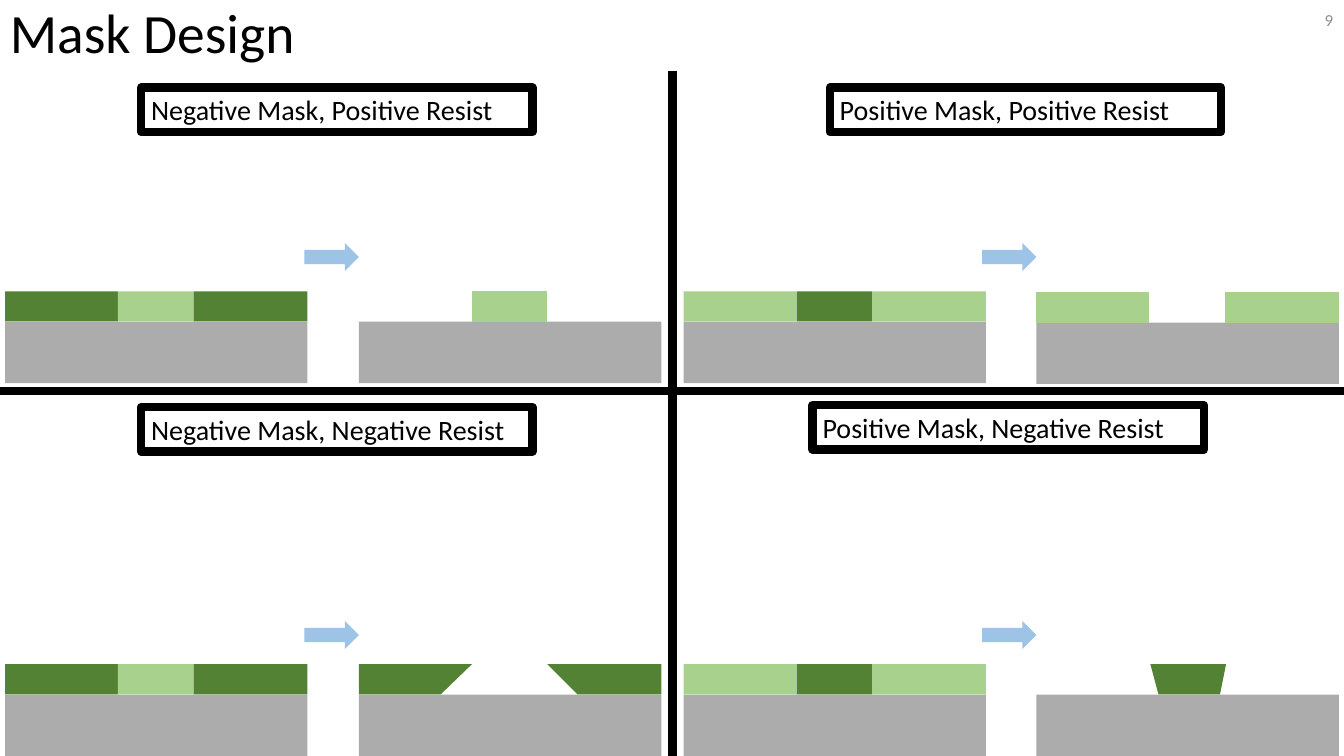
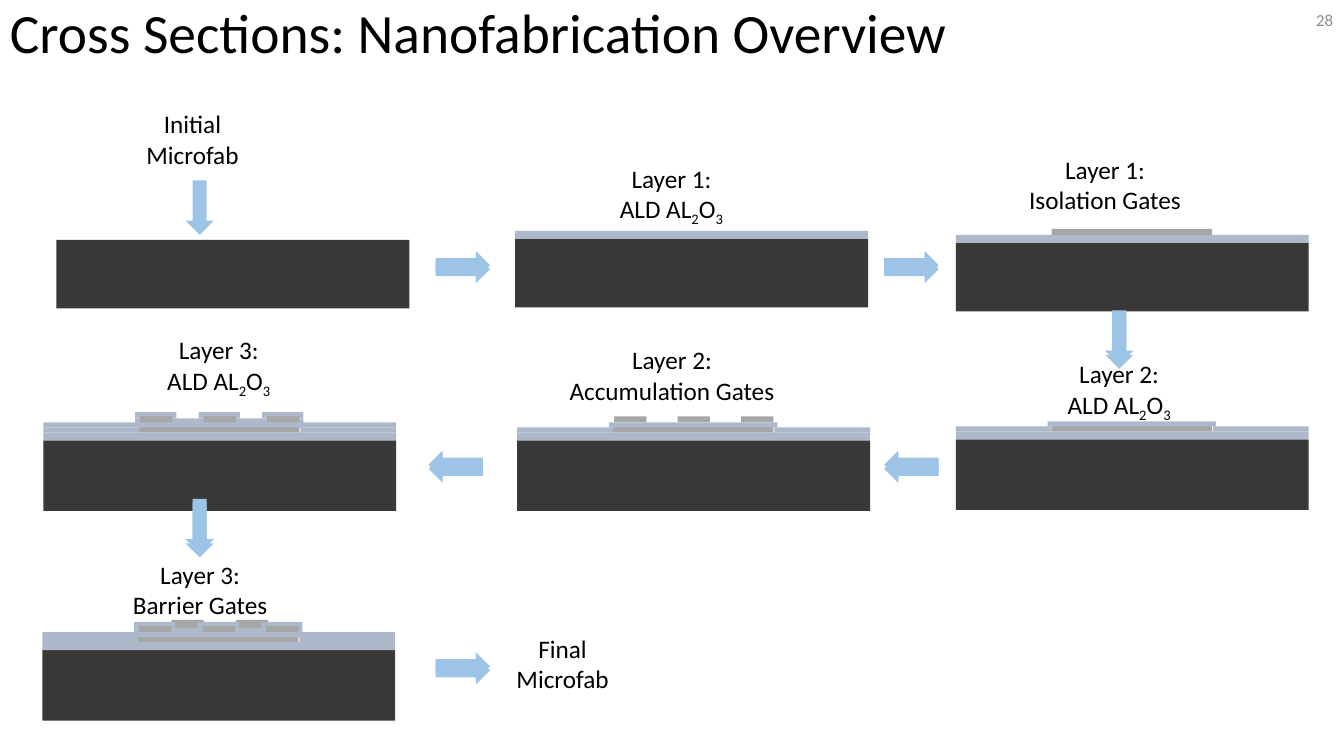
from dataclasses import dataclass
from pptx import Presentation, util as u
from pptx.dml import color
from pptx.enum import shapes as sh, text as tx
from pptx.oxml import ns, xmlchemy as xc

In = u.Inches


@dataclass(frozen=True)
class Theme:
    font: str = "Calibri"
    head: float = 39.6
    label: float = 20
    note: float = 18
    page: float = 12
    rule: float = 6
    ink: str = "000000"
    mute: str = "8C8C8C"
    base: str = "ACACAC"
    light: str = "A9D18E"
    dark: str = "548235"
    arrow: str = "9DC3E6"
    wafer: str = "3B3838"
    oxide: str = "ADB9CA"
    gate: str = "A6A6A6"


T = Theme()
LEFT, MID, RIGHT = tx.PP_ALIGN.LEFT, tx.PP_ALIGN.CENTER, tx.PP_ALIGN.RIGHT
TOP, HALF = tx.MSO_ANCHOR.TOP, tx.MSO_ANCHOR.MIDDLE
RECT = sh.MSO_SHAPE.RECTANGLE


# --- Shared parts ---
def rgb(tone):
    return color.RGBColor.from_string(tone)


def paint(shape, tone):
    shape.shadow.inherit = False
    shape.fill.solid()
    shape.fill.fore_color.rgb = rgb(tone)
    shape.line.fill.background()
    return shape


def block(group, x, y, w, h, tone, kind=RECT):
    return paint(group.add_shape(kind, In(x), In(y), In(w), In(h)), tone)


def arrow(group, x, y, turn=0):
    shape = block(group, x, y, 0.54, 0.28, T.arrow, sh.MSO_SHAPE.RIGHT_ARROW)
    shape.rotation = turn


def write(shape, lines, size, tone=T.ink, align=LEFT, anchor=TOP, pitch=None):
    """Each line is a string or a list of (words, lowered) runs."""
    frame = shape.text_frame
    frame.word_wrap = True
    frame.vertical_anchor = anchor
    for i, line in enumerate(lines):
        para = frame.paragraphs[0] if i == 0 else frame.add_paragraph()
        para.alignment = align
        if pitch:
            para.line_spacing = pitch
        for words, low in [(line, False)] if isinstance(line, str) else line:
            run = para.add_run()
            run.text = words
            run.font.name = T.font
            run.font.size = u.Pt(size)
            run.font.color.rgb = rgb(tone)
            if low:
                run._r.get_or_add_rPr().set("baseline", "-25000")


def box(slide, x, y, w, h, lines, size, **style):
    shape = slide.shapes.add_textbox(In(x), In(y), In(w), In(h))
    write(shape, lines, size, **style)


def start(deck, title, page):
    slide = deck.slides.add_slide(deck.slide_layouts[6])
    box(slide, 0, 0, 11.5, 0.7, [title], T.head, anchor=HALF, pitch=0.9)
    box(slide, 12.32, 0, 1, 0.4, [page], T.page, tone=T.mute,
        align=RIGHT, anchor=HALF)
    return slide


# --- Mask design ---
def rule(slide, x1, y1, x2, y2):
    line = slide.shapes.add_connector(
        sh.MSO_CONNECTOR.STRAIGHT, In(x1), In(y1), In(x2), In(y2))
    line.line.color.rgb = rgb(T.ink)
    line.line.width = u.Pt(T.rule)
    line._element.spPr.append(xc.OxmlElement("a:effectLst"))


def label(slide, x, y, words):
    shape = slide.shapes.add_shape(RECT, In(x), In(y), In(3.88), In(0.44))
    shape.shadow.inherit = False
    shape.fill.background()
    shape.line.color.rgb = rgb(T.ink)
    shape.line.width = u.Pt(T.rule)
    edge = shape._element.spPr.find(ns.qn("a:ln"))
    edge.append(xc.OxmlElement("a:round"))
    write(shape, [words], T.label)


def poly(group, x, y, points, tone):
    dots = [(In(x + dx), In(y + dy)) for dx, dy in points]
    path = group.build_freeform(*dots[0], scale=1.0)
    path.add_line_segments(dots[1:], close=True)
    paint(path.convert_to_shape(), tone)


THICK = 0.3                                     # resist height
CELLS = [(0, 1.12), (1.12, 0.75), (1.87, 1.13)]  # left, width on the base


def bars(*cells):
    """Outlines of whole resist cells."""
    spans = [(CELLS[i][0], sum(CELLS[i])) for i in cells]
    return [[(a, 0), (b, 0), (b, THICK), (a, THICK)] for a, b in spans]


def panel(slide, x, y, name, tag, shift, drop, tones, left, kept):
    """One quadrant; x, y is the top left of its resist."""
    label(slide, *tag, name)
    group = slide.shapes
    far, low = shift
    block(group, x, y + THICK, 3, 0.61, T.base)
    for (dx, w), tone in zip(CELLS, tones):
        block(group, x + dx, y, w, THICK, tone)
    block(group, x + far, y + low + THICK, 3, 0.61, T.base)
    for points in left:
        poly(group, x + far, y + low, points, kept)
    arrow(group, x + far - 0.54, y - drop)


def masks(deck):
    slide = start(deck, "Mask Design", "9")
    rule(slide, 6.67, 0.7, 6.67, 7.5)
    rule(slide, 0, 3.88, 13.33, 3.88)
    neg, pos = (T.dark, T.light, T.dark), (T.light, T.dark, T.light)
    wings = [[(0, 0), (1.12, 0), (0.81, THICK), (0, THICK)],
             [(1.87, 0), (3, 0), (3, THICK), (2.17, THICK)]]
    wedge = [[(1.13, 0), (1.88, 0), (1.82, THICK), (1.21, THICK)]]
    panel(slide, 0.05, 2.89, "Negative Mask, Positive Resist", (1.4, 0.87),
          (3.51, 0), 0.48, neg, bars(1), T.light)
    panel(slide, 6.78, 2.89, "Positive Mask, Positive Resist", (8.23, 0.87),
          (3.5, 0.01), 0.48, pos, bars(0, 2), T.light)
    panel(slide, 0.05, 6.59, "Negative Mask, Negative Resist", (1.4, 4.04),
          (3.51, 0), 0.43, neg, wings, T.dark)
    panel(slide, 6.78, 6.59, "Positive Mask, Negative Resist", (8.06, 4.02),
          (3.5, 0), 0.43, pos, wedge, T.dark)


# --- Cross sections ---
# Back to front: step that adds the part, tone, lefts, top, width, height,
# measured from the top left of the wafer.
PARTS = [
    (6, T.gate, (1.28, 1.92), -0.3, 0.32, 0.08),
    (5, T.oxide, (0.91, 1.54, 2.17), -0.28, 0.41, 0.06),
    (5, T.oxide, (0,), -0.18, 3.5, 0.05),
    (5, T.oxide, (0.91,), -0.22, 1.67, 0.05),
    (1, T.oxide, (0,), -0.08, 3.5, 0.08),
    (2, T.gate, (0.95,), -0.14, 1.59, 0.06),
    (3, T.oxide, (0.91,), -0.18, 1.67, 0.05),
    (3, T.oxide, (0, 2.55), -0.13, 0.95, 0.05),
    (4, T.gate, (0.96, 1.59, 2.22), -0.24, 0.32, 0.06),
]


def stack(slide, x, y, h, step):
    """Wafer at x, y with every part added up to the step."""
    group = slide.shapes.add_group_shape().shapes
    block(group, x, y, 3.5, h, T.wafer)
    for since, tone, lefts, top, w, tall in PARTS:
        if since <= step:
            for dx in lefts:
                block(group, x + dx, y + top, w, tall, tone)


def steps(deck):
    slide = start(deck, "Cross Sections: Nanofabrication Overview", "28")
    # Wafers, in order of the process
    places = [(0.56, 2.38, 0.68), (5.11, 2.37, 0.68), (9.48, 2.41, 0.68),
              (9.48, 4.36, 0.7), (5.13, 4.37, 0.7), (0.43, 4.37, 0.7),
              (0.42, 6.45, 0.7)]
    for step, place in enumerate(places):
        stack(slide, *place, step)
    # Arrows; all but the first are doubled
    arrow(slide.shapes, 1.71, 1.92, 90)
    for x, y, turn in [(4.32, 2.49, 0), (8.77, 2.49, 0), (10.83, 3.21, 90),
                       (8.77, 4.47, 180), (4.25, 4.47, 180),
                       (1.71, 5.08, 90), (4.32, 6.47, 0)]:
        for dy in (0.04, 0):
            arrow(slide.shapes, x, y + dy, turn)
    # Captions
    ald = [("ALD AL", False), ("2", True), ("O", False), ("3", True)]
    for x, y, w, *lines in [
            (1.23, 1.03, 1.36, "Initial", "Microfab"),
            (5.98, 1.57, 1.36, "Layer 1:", ald),
            (10.04, 1.48, 1.84, "Layer 1:", "Isolation Gates"),
            (10.42, 3.51, 1.36, "Layer 2:", ald),
            (5.51, 3.37, 2.31, "Layer 2:", "Accumulation Gates"),
            (1.49, 3.27, 1.36, "Layer 3:", ald),
            (0.83, 5.5, 2.31, "Layer 3:", "Barrier Gates"),
            (4.9, 6.23, 1.36, "Final", "Microfab")]:
        box(slide, x, y, w, 0.71, lines, T.note, align=MID)


def main():
    deck = Presentation()
    deck.slide_width, deck.slide_height = In(13.33), In(7.5)
    masks(deck)
    steps(deck)
    deck.save("out.pptx")


if __name__ == "__main__":
    main()
